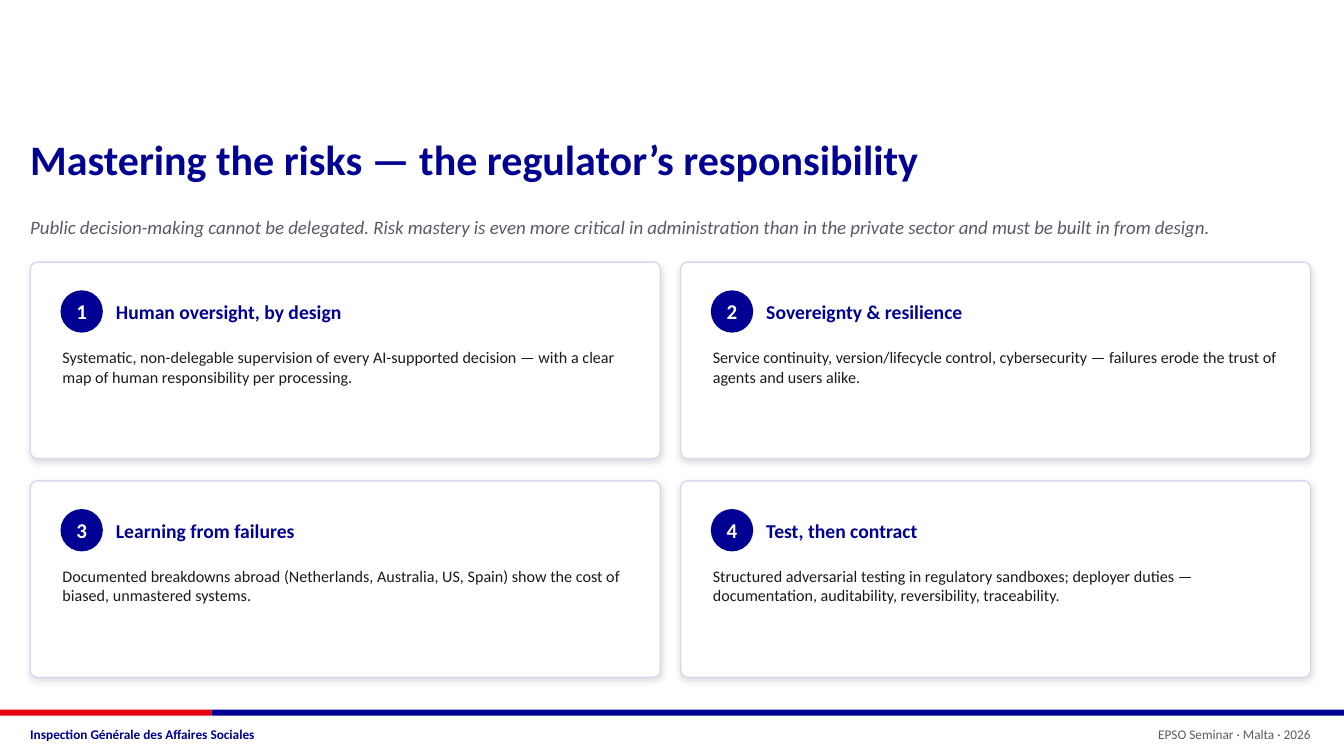
from dataclasses import dataclass

from lxml import etree
from pptx import Presentation
from pptx import util as u
from pptx.dml.color import RGBColor
from pptx.enum import shapes, text
from pptx.oxml import ns

EMU_PER_PX = 9144  # 100 px to the inch


@dataclass(frozen=True)
class Theme:
    font: str = "Calibri"
    navy: str = "000092"
    red: str = "E1000F"
    grey: str = "5A5A66"
    ink: str = "1A1A1A"
    white: str = "FFFFFF"
    border: str = "D6D8EE"
    shadow: str = "000000"
    title: float = 30
    badge: float = 15
    heading: float = 14
    subtitle: float = 13.5
    body: float = 11.5
    footer: float = 9.5


def px(*lengths):
    return [u.Emu(length * EMU_PER_PX) for length in lengths]


class SlideBuilder:
    def __init__(self, page, theme):
        self.page = page
        self.theme = theme

    def shape(self, kind, left, top, width, height, fill):
        shape = self.page.shapes.add_shape(kind, *px(left, top, width, height))
        shape.shadow.inherit = False
        shape.fill.solid()
        shape.fill.fore_color.rgb = RGBColor.from_string(fill)
        shape.line.fill.background()
        return shape

    def bar(self, left, top, width, height, fill):
        return self.shape(shapes.MSO_SHAPE.RECTANGLE, left, top, width, height, fill)

    def set_text(self, shape, words, size, color, bold=False, italic=False,
                 align=text.PP_ALIGN.LEFT, anchor=text.MSO_ANCHOR.MIDDLE):
        frame = shape.text_frame
        frame.word_wrap = True
        frame.vertical_anchor = anchor
        frame.margin_left = frame.margin_top = 0
        frame.margin_right = frame.margin_bottom = 0
        para = frame.paragraphs[0]
        para.text = words
        para.alignment = align
        font = para.font
        font.name = self.theme.font
        font.size = u.Pt(size)
        font.bold = bold
        font.italic = italic
        font.color.rgb = RGBColor.from_string(color)

    def label(self, left, top, width, height, words, size, color, **style):
        box = self.page.shapes.add_textbox(*px(left, top, width, height))
        self.set_text(box, words, size, color, **style)

    def panel(self, left, top, width, height):
        theme = self.theme
        panel = self.shape(shapes.MSO_SHAPE.ROUNDED_RECTANGLE,
                           left, top, width, height, theme.white)
        panel.adjustments[0] = 0.036
        panel.line.color.rgb = RGBColor.from_string(theme.border)
        panel.line.width = u.Pt(1)
        # Soft shadow below the panel
        effects = panel._element.spPr.find(ns.qn("a:effectLst"))
        shadow = etree.SubElement(
            effects, ns.qn("a:outerShdw"), blurRad=str(u.Pt(5)), dist=str(u.Pt(2)),
            dir="5400000", algn="ctr", rotWithShape="0")
        color = etree.SubElement(shadow, ns.qn("a:srgbClr"), val=theme.shadow)
        etree.SubElement(color, ns.qn("a:alpha"), val="12000")

    def badge(self, left, top, size, words):
        badge = self.shape(shapes.MSO_SHAPE.OVAL, left, top, size, size, self.theme.navy)
        self.set_text(badge, words, self.theme.badge, self.theme.white, bold=True,
                      align=text.PP_ALIGN.CENTER)

    def card(self, left, top, width, height, number, heading, body):
        theme = self.theme
        self.panel(left, top, width, height)
        self.badge(left + 30, top + 28, 42, str(number))
        self.label(left + 85, top + 26, 520, 46, heading, theme.heading, theme.navy,
                   bold=True)
        self.label(left + 32, top + 85, 560, 100, body, theme.body, theme.ink,
                   anchor=text.MSO_ANCHOR.TOP)


CARDS = [
    ("Human oversight, by design",
     "Systematic, non-delegable supervision of every AI-supported decision — "
     "with a clear map of human responsibility per processing."),
    ("Sovereignty & resilience",
     "Service continuity, version/lifecycle control, cybersecurity — "
     "failures erode the trust of agents and users alike."),
    ("Learning from failures",
     "Documented breakdowns abroad (Netherlands, Australia, US, Spain) "
     "show the cost of biased, unmastered systems."),
    ("Test, then contract",
     "Structured adversarial testing in regulatory sandboxes; deployer duties — "
     "documentation, auditability, reversibility, traceability."),
]


def main():
    theme = Theme()
    deck = Presentation()
    deck.slide_width, deck.slide_height = u.Inches(13.33), u.Inches(7.5)
    page = deck.slides.add_slide(deck.slide_layouts[6])
    slide = SlideBuilder(page, theme)
    margin = 30

    # Footer
    slide.bar(0, 704, 210, 6, theme.red)
    slide.bar(210, 704, 1123, 6, theme.navy)
    slide.label(margin, 713, 800, 30, "Inspection Générale des Affaires Sociales",
                theme.footer, theme.navy, bold=True)
    slide.label(850, 713, 450, 30, "EPSO Seminar · Malta · 2026",
                theme.footer, theme.grey, align=text.PP_ALIGN.RIGHT)

    # Title and subtitle
    slide.label(margin, 115, 1260, 85,
                "Mastering the risks — the regulator’s responsibility",
                theme.title, theme.navy, bold=True)
    slide.label(margin, 200, 1270, 50,
                "Public decision-making cannot be delegated. Risk mastery is even more "
                "critical in administration than in the private sector and must be "
                "built in from design.",
                theme.subtitle, theme.grey, italic=True)

    # Two-by-two grid of cards
    width, height, column_gap, row_gap = 625, 195, 20, 22
    for index, (heading, body) in enumerate(CARDS):
        row, column = divmod(index, 2)
        slide.card(margin + column * (width + column_gap),
                   260 + row * (height + row_gap),
                   width, height, index + 1, heading, body)

    deck.save("out.pptx")


if __name__ == "__main__":
    main()
